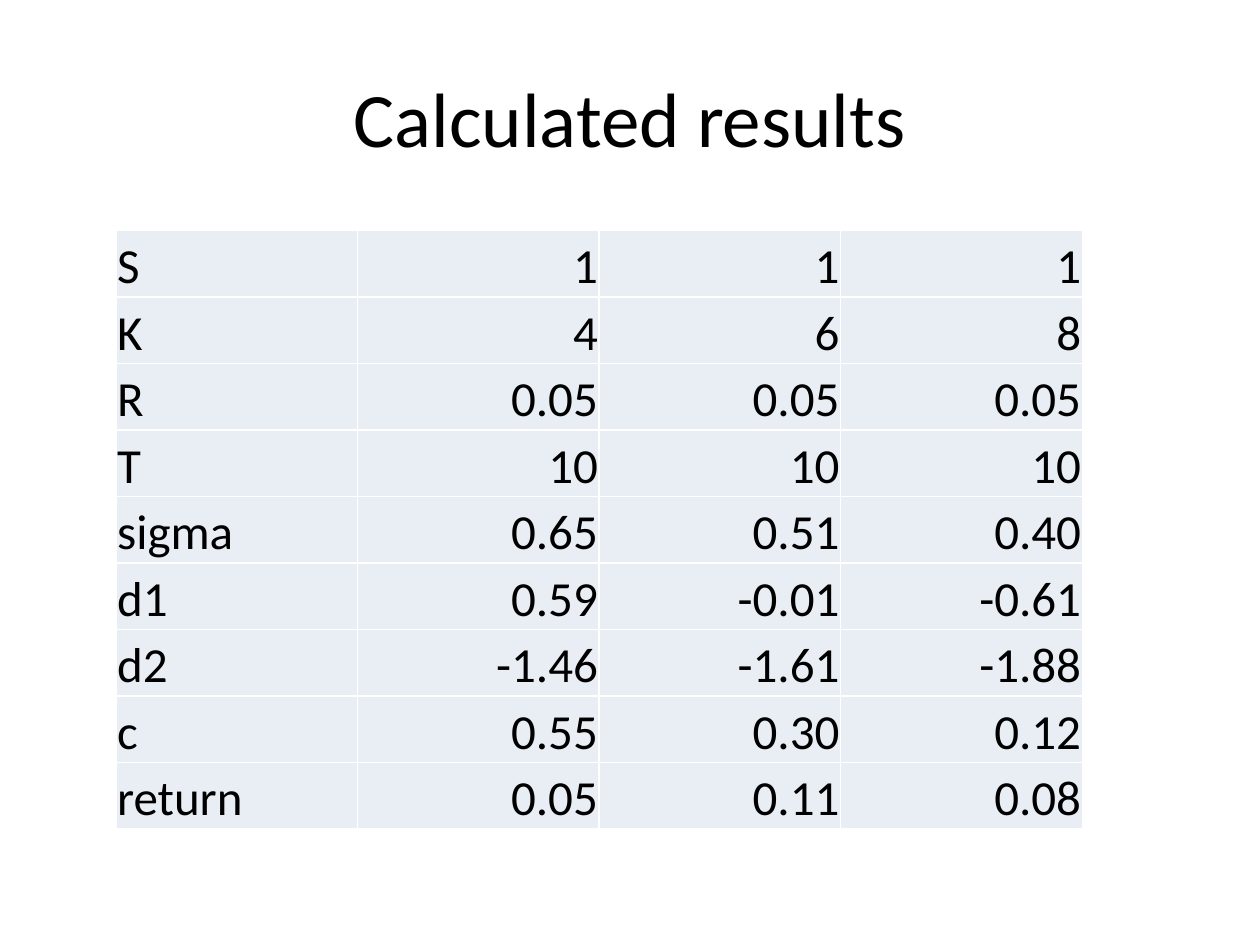
from dataclasses import dataclass

from lxml import etree
from pptx import Presentation
from pptx import util as u
from pptx.dml.color import RGBColor
from pptx.enum import text
from pptx.oxml import ns


@dataclass(frozen=True)
class Theme:
    font: str = "Calibri"
    ink: str = "000000"
    cell: str = "E9EDF4"
    border: str = "FFFFFF"
    title_size: int = 44
    cell_size: int = 28


THEME = Theme()

RESULTS = [
    ("S", "1", "1", "1"),
    ("K", "4", "6", "8"),
    ("R", "0.05", "0.05", "0.05"),
    ("T", "10", "10", "10"),
    ("sigma", "0.65", "0.51", "0.40"),
    ("d1", "0.59", "-0.01", "-0.61"),
    ("d2", "-1.46", "-1.61", "-1.88"),
    ("c", "0.55", "0.30", "0.12"),
    ("return", "0.05", "0.11", "0.08"),
]


def write(tf, words, size, align):
    tf.text = words
    p = tf.paragraphs[0]
    p.alignment = align
    font = p.runs[0].font
    font.name = THEME.font
    font.size = u.Pt(size)
    font.color.rgb = RGBColor.from_string(THEME.ink)


def add_borders(cell):
    tc_pr = cell._tc.get_or_add_tcPr()
    for side in ("lnL", "lnR", "lnT", "lnB"):
        ln = etree.SubElement(tc_pr, ns.qn(f"a:{side}"), w=str(u.Pt(1)))
        fill = etree.SubElement(ln, ns.qn("a:solidFill"))
        etree.SubElement(fill, ns.qn("a:srgbClr"), val=THEME.border)


def add_title(s, words, left, top, width, height):
    sp = s.shapes.add_textbox(left, top, width, height)
    tf = sp.text_frame
    tf.word_wrap = True
    tf.vertical_anchor = text.MSO_ANCHOR.MIDDLE
    write(tf, words, THEME.title_size, text.PP_ALIGN.CENTER)


def style_cell(cell, words, align):
    cell.margin_left = cell.margin_right = cell.margin_top = u.Inches(0.01)
    cell.margin_bottom = 0
    cell.vertical_anchor = text.MSO_ANCHOR.BOTTOM
    add_borders(cell)
    cell.fill.solid()
    cell.fill.fore_color.rgb = RGBColor.from_string(THEME.cell)
    write(cell.text_frame, words, THEME.cell_size, align)


def add_results(s, rows, left, top, width, height):
    frame = s.shapes.add_table(len(rows), len(rows[0]), left, top, width, height)
    table = frame.table
    table.first_row = table.horz_banding = False
    for i, row in enumerate(rows):
        for j, words in enumerate(row):
            align = text.PP_ALIGN.RIGHT if j else text.PP_ALIGN.LEFT
            style_cell(table.cell(i, j), words, align)


def main():
    prs = Presentation()
    prs.slide_width, prs.slide_height = u.Inches(10), u.Inches(7.5)
    s = prs.slides.add_slide(prs.slide_layouts[6])
    add_title(s, "Calculated results",
              u.Inches(0.5), u.Inches(0.3), u.Inches(9), u.Inches(1.25))
    add_results(s, RESULTS,
                u.Inches(0.92), u.Inches(1.83), u.Inches(7.67), u.Inches(4.75))
    prs.save("out.pptx")


if __name__ == "__main__":
    main()
